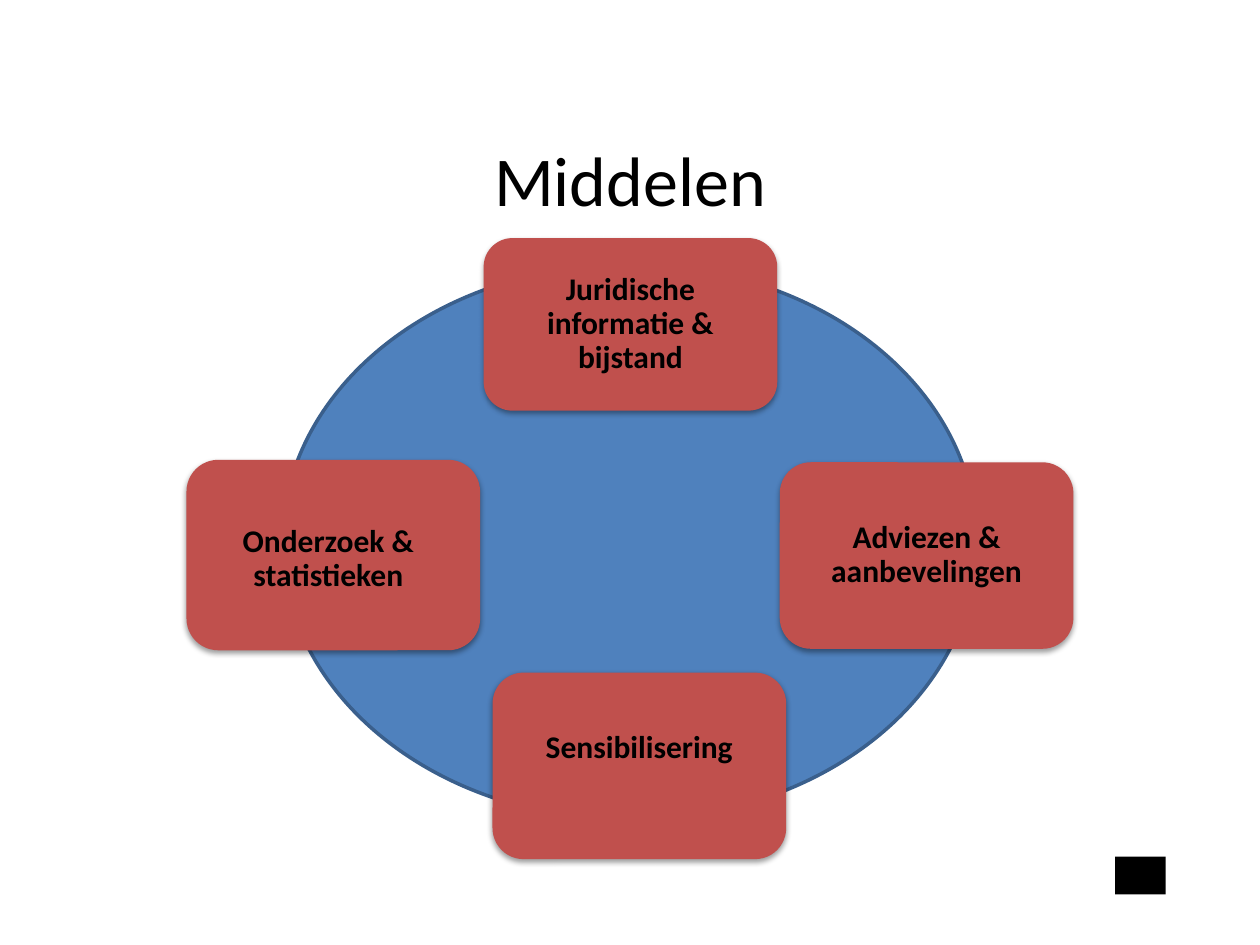
from dataclasses import dataclass

from lxml import etree
from pptx import Presentation
from pptx.dml.color import RGBColor
from pptx.enum.shapes import MSO_SHAPE
from pptx.enum.text import MSO_ANCHOR, PP_ALIGN
from pptx.oxml.ns import qn
from pptx.util import Cm, Pt

OVAL, RECT, ROUND = MSO_SHAPE.OVAL, MSO_SHAPE.RECTANGLE, MSO_SHAPE.ROUNDED_RECTANGLE
TOP, MIDDLE = MSO_ANCHOR.TOP, MSO_ANCHOR.MIDDLE
CENTER = PP_ALIGN.CENTER


@dataclass(frozen=True)
class Theme:
    """Colours, font and type sizes."""
    font: str = "Calibri"
    ink: str = "000000"
    blue: str = "4F81BD"
    edge: str = "3A5F8C"
    red: str = "C0504D"
    head: int = 40
    body: int = 18


THEME = Theme()
EVEN = (0.18, 0.18, 0.18, 0.18)
CARDS = (
    ("Juridische informatie & bijstand", (5.99, 0, 5.92, 3.48), EVEN),
    ("Adviezen & aanbevelingen", (11.96, 4.52, 5.92, 3.76), EVEN),
    ("Onderzoek & statistieken", (0, 4.47, 5.92, 3.84), (0.18, 0.41, 0.38, 0.23)),
    ("Sensibilisering", (6.17, 8.76, 5.92, 3.76), None),
)


def add_shape(slide, kind, box, fill):
    """Add a flat filled shape without an outline."""
    shape = slide.shapes.add_shape(kind, *map(Cm, box))
    shape.shadow.inherit = False
    shape.fill.solid()
    shape.fill.fore_color.rgb = RGBColor.from_string(fill)
    shape.line.fill.background()
    return shape


def add_shade(shape):
    """Give a shape a soft shadow straight below it."""
    list_ = shape.element.spPr.find(qn("a:effectLst"))
    outer = etree.SubElement(list_, qn("a:outerShdw"), blurRad="40000",
                             dist="20000", dir="5400000", rotWithShape="0")
    tone = etree.SubElement(outer, qn("a:srgbClr"), val=THEME.ink)
    etree.SubElement(tone, qn("a:alpha"), val="38000")


def write(shape, text, size, bold=False, anchor=MIDDLE, space=1.0):
    """Write one centred paragraph and return its frame."""
    frame = shape.text_frame
    frame.word_wrap = True
    frame.vertical_anchor = anchor
    para = frame.paragraphs[0]
    para.alignment = CENTER
    para.line_spacing = space
    run = para.add_run()
    run.text = text
    font = run.font
    font.name, font.size, font.bold = THEME.font, Pt(size), bold
    font.color.rgb = RGBColor.from_string(THEME.ink)
    return frame


def add_title(slide, box, text):
    """Place the slide title."""
    write(slide.shapes.add_textbox(*map(Cm, box)), text, THEME.head)


def add_card(slide, box, text, inset):
    """Place a card, with an inset label or with text near its top."""
    card = add_shape(slide, ROUND, box, THEME.red)
    add_shade(card)
    if inset is None:
        frame = write(card, text, THEME.body, True, TOP)
        frame.margin_top = Cm(0.92)
        return
    x, y, w, h = box
    left, top, right, low = inset
    area = (x + left, y + top, w - left - right, h - top - low)
    label = add_shape(slide, RECT, area, THEME.red)
    frame = write(label, text, THEME.body, True, space=0.9)
    frame.margin_left = frame.margin_right = Cm(0.18)
    frame.margin_top = frame.margin_bottom = Cm(0.18)


def add_cycle(slide, box):
    """Place the ellipse and the four cards around it."""
    x, y, w, h = box
    oval = add_shape(slide, OVAL, (x + 1.93, y + 0.53, 14, 11.2), THEME.blue)
    oval.line.color.rgb = RGBColor.from_string(THEME.edge)
    oval.line.width = Pt(2)
    for text, (dx, dy, wide, high), inset in CARDS:
        add_card(slide, (x + dx, y + dy, wide, high), text, inset)


def main():
    """Build and save the slide."""
    deck = Presentation()
    deck.slide_width, deck.slide_height = Cm(25.4), Cm(19.05)
    slide = deck.slides.add_slide(deck.slide_layouts[6])
    add_shape(slide, RECT, (22.48, 17.27, 1.02, 0.76), THEME.ink)
    add_title(slide, (1.27, 2.49, 22.86, 2.21), "Middelen")
    add_cycle(slide, (3.76, 4.8, 17.88, 12.52))
    deck.save("out.pptx")


if __name__ == "__main__":
    main()
